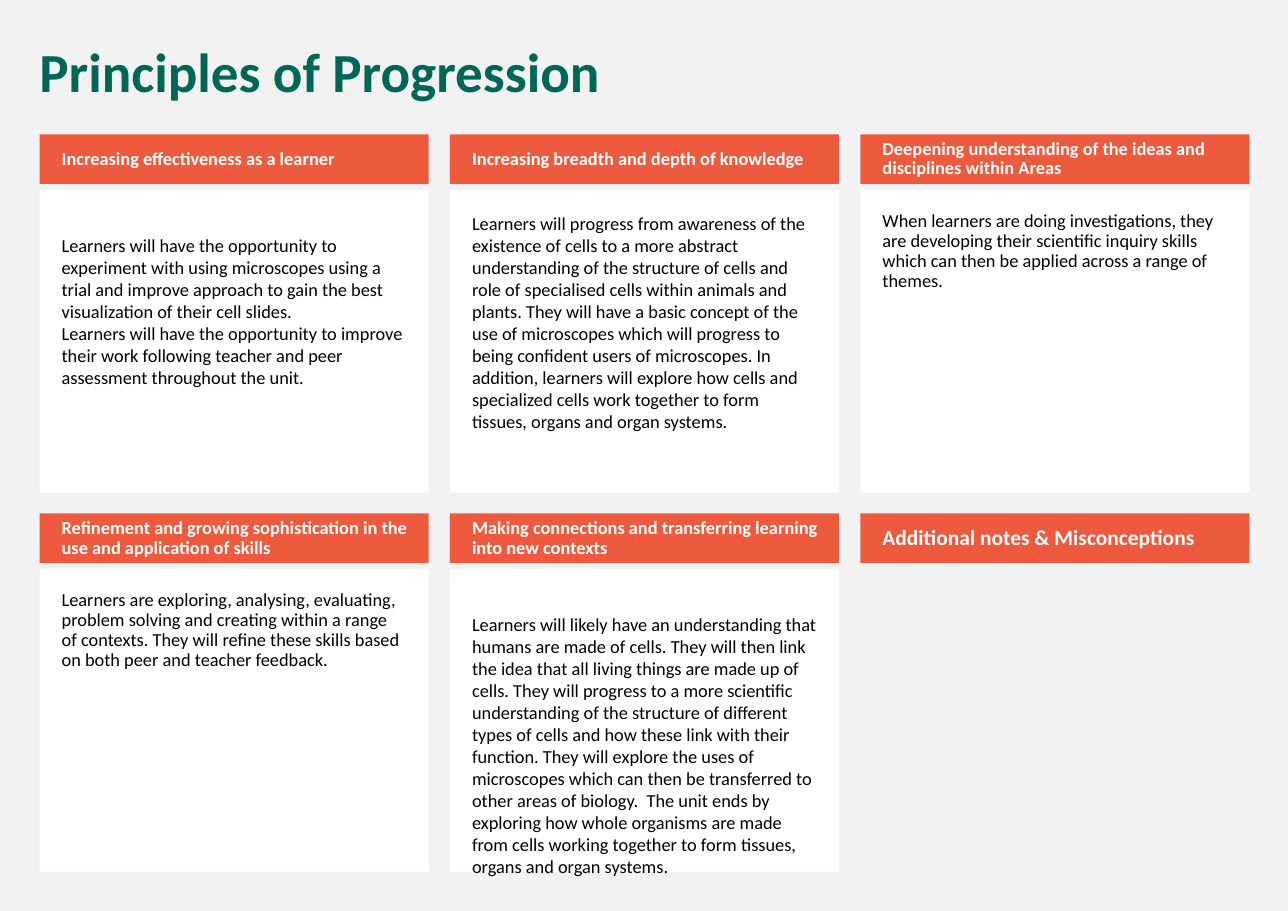
import pptx
import pptx.util
import pptx.dml.color
import pptx.enum.shapes
import pptx.enum.text

Pt = pptx.util.Pt
RGBColor = pptx.dml.color.RGBColor
ANCHOR = pptx.enum.text.MSO_ANCHOR

BACKGROUND = RGBColor(0xF2, 0xF2, 0xF2)
GREEN = RGBColor(0x00, 0x67, 0x58)
ORANGE = RGBColor(0xED, 0x5A, 0x3E)
WHITE = RGBColor(0xFF, 0xFF, 0xFF)
BLACK = RGBColor(0x00, 0x00, 0x00)

GRID_LEFT, GRID_TOP = 25.9, 87.8
COLUMN_STEP, ROW_STEP = 268.2, 247.8
CARD_WIDTH, CARD_HEIGHT = 254.2, 234.2
HEADER_HEIGHT, BODY_OFFSET = 32.4, 36.2
PADDING, LOWERED_PADDING = 14.4, 29

PRINCIPLES = [
    {
        "heading": "Increasing effectiveness as a learner",
        "body": [
            "Learners will have the opportunity to experiment with using microscopes using a trial and improve approach to gain the best visualization of their cell slides.",
            "Learners will have the opportunity to improve their work following teacher and peer assessment throughout the unit.",
        ],
        "padding_top": LOWERED_PADDING,
    },
    {
        "heading": "Increasing breadth and depth of knowledge",
        "body": [
            "Learners will progress from awareness of the existence of cells to a more abstract understanding of the structure of cells and role of specialised cells within animals and plants. They will have a basic concept of the use of microscopes which will progress to being confident users of microscopes. In addition, learners will explore how cells and specialized cells work together to form tissues, organs and organ systems.",
        ],
    },
    {
        "heading": "Deepening understanding of the ideas and disciplines within Areas",
        "body": [
            "When learners are doing investigations, they are developing their scientific inquiry skills which can then be applied across a range of themes.",
        ],
        "line_spacing": 0.9,
    },
    {
        "heading": "Refinement and growing sophistication in the use and application of skills",
        "body": [
            "Learners are exploring, analysing, evaluating, problem solving and creating within a range of contexts. They will refine these skills based on both peer and teacher feedback.",
        ],
        "line_spacing": 0.9,
    },
    {
        "heading": "Making connections and transferring learning into new contexts",
        "body": [
            "Learners will likely have an understanding that humans are made of cells. They will then link the idea that all living things are made up of cells. They will progress to a more scientific understanding of the structure of different types of cells and how these link with their function. They will explore the uses of microscopes which can then be transferred to other areas of biology.  The unit ends by exploring how whole organisms are made from cells working together to form tissues, organs and organ systems.",
        ],
        "padding_top": LOWERED_PADDING,
    },
    {"heading": "Additional notes & Misconceptions", "heading_size": 14},
]


def set_attributes(target, values):
    for name, value in values.items():
        setattr(target, name, value)


def write_text(shape, paragraphs, size, color, bold=False, line_spacing=1.0,
               margins=(7.2, 3.6, 7.2, 3.6), anchor=ANCHOR.TOP):
    left, top, right, bottom = margins
    text_frame = shape.text_frame
    set_attributes(text_frame, {
        "word_wrap": True,
        "vertical_anchor": anchor,
        "margin_left": Pt(left),
        "margin_top": Pt(top),
        "margin_right": Pt(right),
        "margin_bottom": Pt(bottom),
    })
    text_frame.text = "\n".join(paragraphs)
    for paragraph in text_frame.paragraphs:
        set_attributes(paragraph, {
            "alignment": pptx.enum.text.PP_ALIGN.LEFT,
            "line_spacing": line_spacing,
        })
        for run in paragraph.runs:
            set_attributes(run.font, {"name": "Calibri", "size": Pt(size), "bold": bold})
            run.font.color.rgb = color


def add_panel(slide, left, top, width, height, color):
    shape = slide.shapes.add_shape(
        pptx.enum.shapes.MSO_SHAPE.RECTANGLE, Pt(left), Pt(top), Pt(width), Pt(height))
    shape.shadow.inherit = False
    shape.fill.solid()
    shape.fill.fore_color.rgb = color
    shape.line.fill.background()
    return shape


def add_title(slide, left, top, width, height):
    title = slide.shapes.add_textbox(Pt(left), Pt(top), Pt(width), Pt(height))
    write_text(title, ["Principles of Progression"], 36, GREEN, bold=True, line_spacing=0.9)


def add_card(slide, left, top, width, height, principle):
    if "body" in principle:
        body = add_panel(slide, left, top + BODY_OFFSET, width, height - BODY_OFFSET, WHITE)
        padding_top = principle.get("padding_top", PADDING)
        write_text(body, principle["body"], 12, BLACK,
                   line_spacing=principle.get("line_spacing", 1.0),
                   margins=(PADDING, padding_top, PADDING, PADDING))
    header = add_panel(slide, left, top, width, HEADER_HEIGHT, ORANGE)
    write_text(header, [principle["heading"]], principle.get("heading_size", 12), WHITE,
               bold=True, line_spacing=0.9, margins=(PADDING, 3.6, 7.2, 3.6),
               anchor=ANCHOR.MIDDLE)


def add_card_grid(slide, left, top):
    for index, principle in enumerate(PRINCIPLES):
        row, column = divmod(index, 3)
        add_card(slide, left + column * COLUMN_STEP, top + row * ROW_STEP,
                 CARD_WIDTH, CARD_HEIGHT, principle)


def main():
    presentation = pptx.Presentation()
    set_attributes(presentation, {"slide_width": Pt(841.68), "slide_height": Pt(595.44)})
    slide = presentation.slides.add_slide(presentation.slide_layouts[6])
    slide.background.fill.solid()
    slide.background.fill.fore_color.rgb = BACKGROUND
    add_title(slide, 18.7, 25.9, 797.8, 46.8)
    add_card_grid(slide, GRID_LEFT, GRID_TOP)
    presentation.save("out.pptx")


if __name__ == "__main__":
    main()
